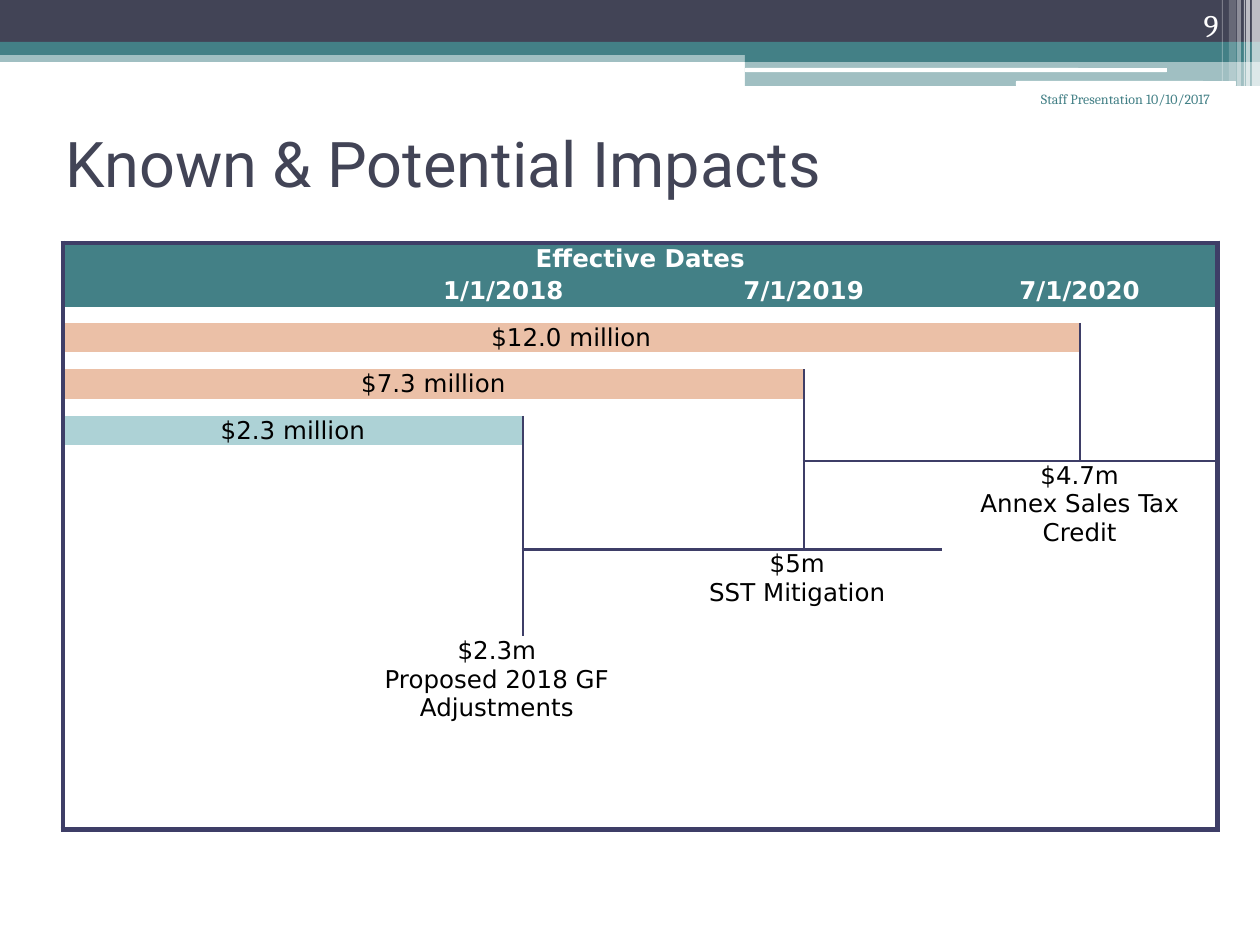
from lxml import etree
from pptx import Presentation
from pptx.dml.color import RGBColor
from pptx.enum.shapes import MSO_SHAPE
from pptx.enum.text import MSO_ANCHOR, PP_ALIGN
from pptx.oxml.ns import qn
from pptx.util import Emu, Pt

RECTANGLE, ROUNDED = MSO_SHAPE.RECTANGLE, MSO_SHAPE.ROUNDED_RECTANGLE
TOP, MIDDLE, BOTTOM = MSO_ANCHOR.TOP, MSO_ANCHOR.MIDDLE, MSO_ANCHOR.BOTTOM
LEFT, CENTER, RIGHT = PP_ALIGN.LEFT, PP_ALIGN.CENTER, PP_ALIGN.RIGHT
EMU_PER_PX = 914400 // 126

NAVY, TEAL, WHITE, BLACK = "424456", "438086", "FFFFFF", "000000"
PEACH, AQUA, RULE = "EBC0A7", "ADD2D6", "3E3E67"
TABLE_FONT, SERIF_FONT, TITLE_FONT = "DejaVu Sans", "Cambria", "Roboto"

# shape, left, top, width, height, colour, opacity in percent
BANDS = [
    (RECTANGLE, 0, 50, 1260, 12, TEAL, 50),
    (RECTANGLE, 0, 0, 1260, 43, NAVY, 100),
    (RECTANGLE, 0, 42, 1260, 13, TEAL, 100),
    (RECTANGLE, 745, 49, 515, 13, TEAL, 100),
    (RECTANGLE, 745, 61, 515, 25, TEAL, 50),
    (ROUNDED, 745, 68, 422, 4, WHITE, 100),
    (ROUNDED, 1016, 81, 220, 5, WHITE, 100),
    (RECTANGLE, 1252, 0, 8, 86, WHITE, 65),
    (RECTANGLE, 1246, 0, 4, 86, WHITE, 65),
    (RECTANGLE, 1244, 0, 1, 86, WHITE, 60),
    (RECTANGLE, 1237, 0, 4, 86, WHITE, 40),
    (RECTANGLE, 1229, 0, 7, 81, WHITE, 20),
    (RECTANGLE, 1222, 0, 1, 81, WHITE, 30),
]

TITLE = "Known & Potential Impacts"
# text, left, top, width, height, size, colour, anchor
LABELS = [
    ("9", 1126, 0, 105, 50, 18, WHITE, BOTTOM),
    ("Staff Presentation 10/10/2017", 892, 84, 331, 32, 8, TEAL, TOP),
]

TABLE_LEFT, TABLE_TOP = 63, 243
COLUMN_WIDTHS = [131, 24, 123, 146, 13, 23, 130, 13, 138, 138, 138, 138]
ROW_HEIGHTS = [32, 32, 16, 29, 17, 28, 17, 29, 16, 87, 86, 86, 86, 20]
ROW_SPANS = [
    [12],
    [3, 5, 2, 2],
    [1, 2, 1, 4, 1, 1, 1, 1],
    [11, 1],
    [1, 2, 1, 4, 1, 1, 1, 1],
    [9, 1, 1, 1],
    [2, 1, 2, 2, 2, 1, 1, 1],
    [6, 1, 2, 1, 1, 1],
    [1, 2, 3, 1, 2, 1, 1, 1],
    [1, 2, 3, 1, 2, 1, 2],
    [1, 2, 3, 1, 3, 1, 1],
    [1, 2, 4, 2, 1, 1, 1],
    [3, 1, 2, 1, 2, 1, 1, 1],
    [1, 2, 3, 1, 2, 1, 1, 1],
]
# (row, column): lines, fill, anchor
CELLS = {
    (0, 0): (["Effective Dates"], TEAL, MIDDLE),
    (1, 0): ([], TEAL, MIDDLE),
    (1, 3): (["1/1/2018"], TEAL, MIDDLE),
    (1, 8): (["7/1/2019"], TEAL, MIDDLE),
    (1, 10): (["7/1/2020"], TEAL, MIDDLE),
    (3, 0): (["$12.0 million"], PEACH, MIDDLE),
    (5, 0): (["$7.3 million"], PEACH, MIDDLE),
    (7, 0): (["$2.3 million"], AQUA, MIDDLE),
    (9, 10): (["$4.7m", "Annex Sales Tax Credit"], WHITE, TOP),
    (10, 7): (["$5m", "SST Mitigation"], WHITE, TOP),
    (11, 3): (["$2.3m", "Proposed 2018 GF Adjustments"], WHITE, MIDDLE),
}
HEADER_ROWS = 2
# grid line: the rows or columns it runs along
VERTICAL_RULES = {6: range(7, 11), 9: range(5, 10), 11: range(3, 9)}
HORIZONTAL_RULES = {9: range(9, 12), 10: range(6, 10)}
FRAME_WIDTH, RULE_WIDTH = 3, 1.5


def px(length):
    return Emu(length * EMU_PER_PX)


def rgb(value):
    return RGBColor.from_string(value)


def format_paragraph(paragraph, size, font_name, color, alignment, bold=False):
    paragraph.alignment = alignment
    font = paragraph.font
    font.size, font.name, font.bold = Pt(size), font_name, bold
    font.color.rgb = rgb(color)


def add_band(slide, kind, left, top, width, height, color, opacity):
    shape = slide.shapes.add_shape(kind, px(left), px(top), px(width), px(height))
    shape.shadow.inherit = False
    shape.fill.solid()
    shape.fill.fore_color.rgb = rgb(color)
    shape.line.fill.background()
    if opacity < 100:
        color_element = shape.fill._xPr.find(qn("a:solidFill"))[0]
        etree.SubElement(color_element, qn("a:alpha"), val=str(opacity * 1000))


def add_label(slide, text, left, top, width, height, size, color, anchor):
    frame = slide.shapes.add_textbox(px(left), px(top), px(width), px(height)).text_frame
    frame.word_wrap = True
    frame.vertical_anchor = anchor
    frame.text = text
    format_paragraph(frame.paragraphs[0], size, SERIF_FONT, color, RIGHT)


def line_width(line, position, rules, last):
    """Width of the rule on a grid line at a row or column, 0 for none."""
    if line in (0, last):
        return FRAME_WIDTH
    return RULE_WIDTH if position in rules.get(line, ()) else 0


def set_borders(cell, row, column, span):
    last_row, last_column = len(ROW_HEIGHTS), len(COLUMN_WIDTHS)
    widths = {
        "a:lnL": line_width(column, row, VERTICAL_RULES, last_column),
        "a:lnR": line_width(column + span, row, VERTICAL_RULES, last_column),
        "a:lnT": line_width(row, column, HORIZONTAL_RULES, last_row),
        "a:lnB": line_width(row + 1, column, HORIZONTAL_RULES, last_row),
    }
    properties = cell._tc.get_or_add_tcPr()
    for index, (tag, width) in enumerate(widths.items()):
        line = etree.Element(qn(tag), w=str(Pt(width)))
        if width:
            fill = etree.SubElement(line, qn("a:solidFill"))
            etree.SubElement(fill, qn("a:srgbClr"), val=RULE)
        else:
            etree.SubElement(line, qn("a:noFill"))
        properties.insert(index, line)


def fill_cell(cell, row, lines, fill, anchor):
    cell.margin_left = cell.margin_right = px(9)
    cell.margin_top = cell.margin_bottom = 0
    cell.vertical_anchor = anchor
    if fill:
        cell.fill.solid()
        cell.fill.fore_color.rgb = rgb(fill)
    else:
        cell.fill.background()
    cell.text = "\n".join(lines)
    header = row < HEADER_ROWS
    for paragraph in cell.text_frame.paragraphs:
        format_paragraph(paragraph, 14 if lines else 6, TABLE_FONT,
                         WHITE if header else BLACK, CENTER, header)
        if not lines:
            etree.SubElement(paragraph._p, qn("a:endParaRPr"), sz="600")


def add_impact_table(slide):
    table = slide.shapes.add_table(
        len(ROW_HEIGHTS), len(COLUMN_WIDTHS), px(TABLE_LEFT), px(TABLE_TOP),
        px(sum(COLUMN_WIDTHS)), px(sum(ROW_HEIGHTS))).table
    table.first_row = table.horz_banding = False
    for table_column, width in zip(table.columns, COLUMN_WIDTHS):
        table_column.width = px(width)
    for row, (height, spans) in enumerate(zip(ROW_HEIGHTS, ROW_SPANS)):
        table.rows[row].height = px(height)
        column = 0
        for span in spans:
            cell = table.cell(row, column)
            if span > 1:
                cell.merge(table.cell(row, column + span - 1))
            fill_cell(cell, row, *CELLS.get((row, column), ([], None, MIDDLE)))
            set_borders(cell, row, column, span)
            column += span


def main():
    presentation = Presentation()
    presentation.slide_width, presentation.slide_height = px(1260), px(945)
    slide = presentation.slides.add_slide(presentation.slide_layouts[5])
    for band in BANDS:
        add_band(slide, *band)
    title = slide.shapes.title
    title.left, title.top, title.width, title.height = px(53), px(126), px(1134), px(73)
    title.text_frame.text = TITLE
    title.text_frame.vertical_anchor = MIDDLE
    format_paragraph(title.text_frame.paragraphs[0], 36, TITLE_FONT, NAVY, LEFT)
    for label in LABELS:
        add_label(slide, *label)
    add_impact_table(slide)
    presentation.save("out.pptx")


if __name__ == "__main__":
    main()
